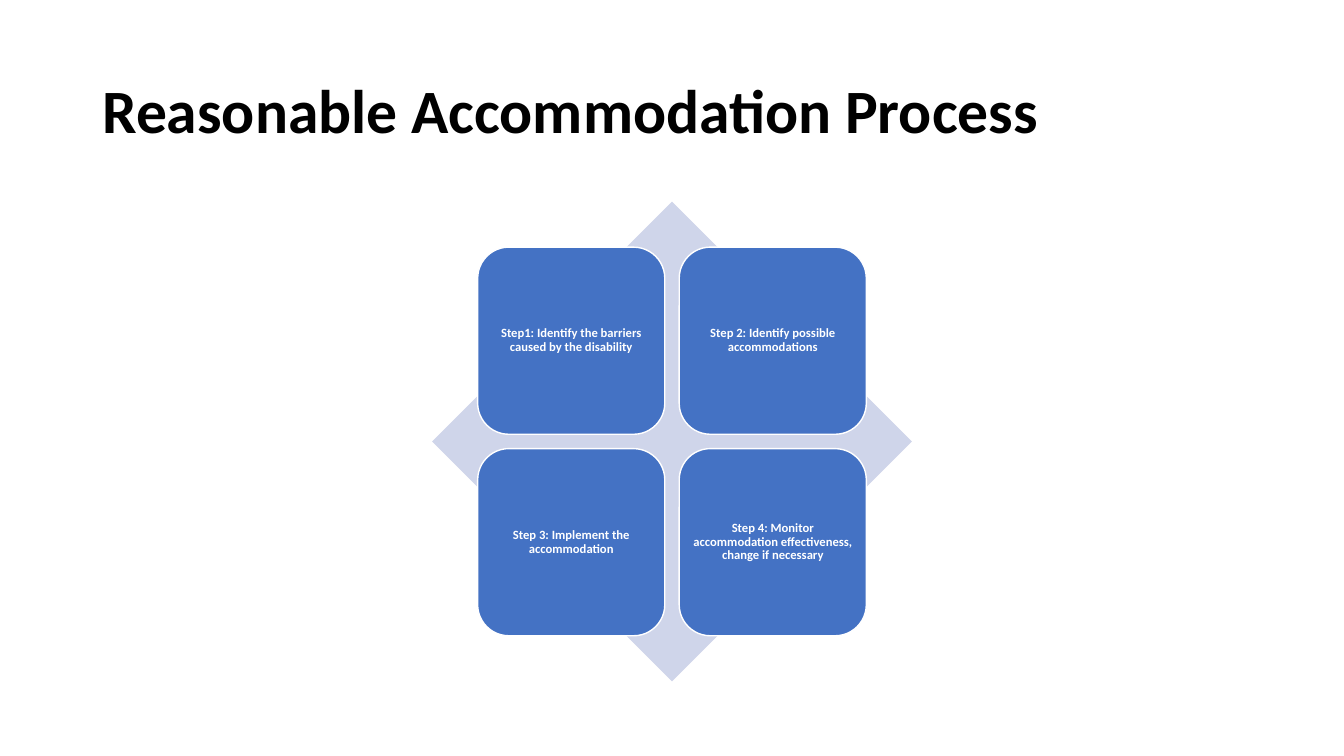
"""Build the slide on the reasonable accommodation process."""
import pptx
import pptx.util
import pptx.dml.color
import pptx.enum.shapes
import pptx.enum.text

Pt = pptx.util.Pt
RGB = pptx.dml.color.RGBColor
Shape = pptx.enum.shapes.MSO_SHAPE
Align = pptx.enum.text.PP_ALIGN
Anchor = pptx.enum.text.MSO_ANCHOR

TITLE = "Reasonable Accommodation Process"
STEPS = [
    "Step1: Identify the barriers caused by the disability",
    "Step 2: Identify possible accommodations",
    "Step 3: Implement the accommodation",
    "Step 4: Monitor accommodation effectiveness, change if necessary",
]

BLACK = RGB(0x00, 0x00, 0x00)
WHITE = RGB(0xFF, 0xFF, 0xFF)
BLUE = RGB(0x44, 0x72, 0xC4)
PALE = RGB(0xCF, 0xD5, 0xEA)

WIDTH, HEIGHT = 960, 540
MID_X, MID_Y = 480, 315.33
SPAN = 342.67
CARD = 133.64
GAP = 10.28


def write(frame, text, size, color, align):
    frame.word_wrap = True
    frame.vertical_anchor = Anchor.MIDDLE
    para = frame.paragraphs[0]
    para.alignment = align
    para.line_spacing = 0.9
    run = para.add_run()
    run.text = text
    run.font.name = "Calibri"
    run.font.size = Pt(size)
    run.font.bold = True
    run.font.color.rgb = color


def draw(slide, kind, left, top, side, fill):
    shape = slide.shapes.add_shape(kind, Pt(left), Pt(top), Pt(side), Pt(side))
    shape.shadow.inherit = False
    shape.fill.solid()
    shape.fill.fore_color.rgb = fill
    shape.line.fill.background()
    return shape


def add_card(slide, index, text):
    row, col = divmod(index, 2)
    edge = CARD + GAP / 2
    left = MID_X - edge + col * (CARD + GAP)
    top = MID_Y - edge + row * (CARD + GAP)
    card = draw(slide, Shape.ROUNDED_RECTANGLE, left, top, CARD, BLUE)
    card.line.color.rgb = WHITE
    card.line.width = Pt(1)
    frame = card.text_frame
    frame.margin_left = frame.margin_right = Pt(2.7)
    frame.margin_top = frame.margin_bottom = Pt(2.7)
    write(frame, text, 9, WHITE, Align.CENTER)


def main():
    deck = pptx.Presentation()
    deck.slide_width, deck.slide_height = Pt(WIDTH), Pt(HEIGHT)
    slide = deck.slides.add_slide(deck.slide_layouts[6])
    title = slide.shapes.add_textbox(Pt(66), Pt(28.75), Pt(828), Pt(104.38))
    write(title.text_frame, TITLE, 44, BLACK, Align.LEFT)
    draw(slide, Shape.DIAMOND, MID_X - SPAN / 2, MID_Y - SPAN / 2, SPAN, PALE)
    for index, text in enumerate(STEPS):
        add_card(slide, index, text)
    deck.save("out.pptx")


if __name__ == "__main__":
    main()
